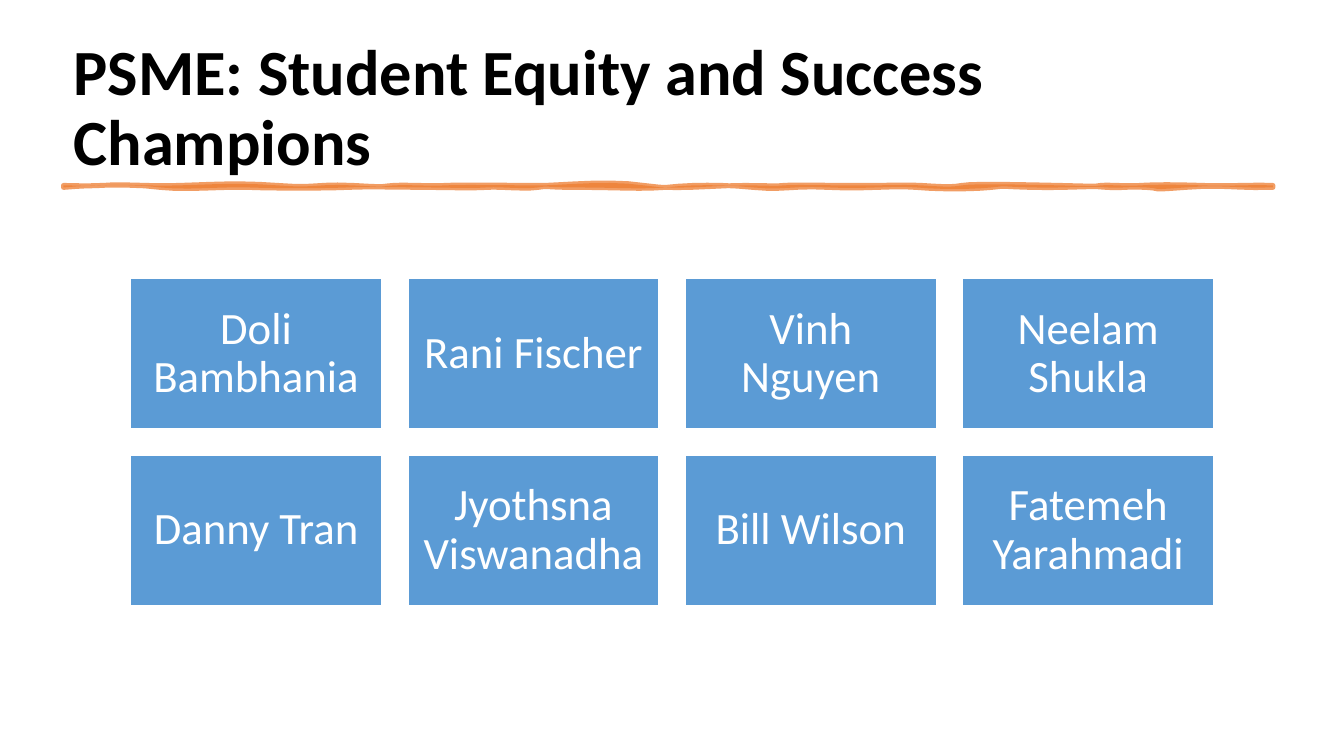
import dataclasses

import lxml.etree
import pptx
import pptx.dml.color
import pptx.enum.shapes
import pptx.enum.text
import pptx.oxml.ns
import pptx.slide
import pptx.text.text
import pptx.util

Cm = pptx.util.Cm
Pt = pptx.util.Pt
RGB = pptx.dml.color.RGBColor

BLACK = RGB(0x00, 0x00, 0x00)
WHITE = RGB(0xFF, 0xFF, 0xFF)
BLUE = RGB(0x5B, 0x9B, 0xD5)
ORANGE = RGB(0xED, 0x7D, 0x31)

FONT = "Calibri"
TITLE = "PSME: Student Equity and Success Champions"
NAMES = (
    "Doli Bambhania", "Rani Fischer", "Vinh Nguyen", "Neelam Shukla",
    "Danny Tran", "Jyothsna Viswanadha", "Bill Wilson", "Fatemeh Yarahmadi",
)

# Tile grid, in centimetres
COLS = 4
LEFT, TOP = 3.28, 7.01
WIDE, HIGH = 6.35, 3.81
GAP = 0.64

# Hand-drawn rule: each curve is x1, y1, x2, y2, end x in units of
# 0.0254 cm; every curve of an edge starts and ends at that edge's height
UNIT = 0.0254
STEPS = 6
START, UPPER, LOWER = 63, 184, 186
OVER = (
    (81, 184, 83, 185, 102), (120, 182, 143, 185, 177),
    (210, 183, 237, 181, 276), (314, 187, 313, 182, 351),
    (388, 186, 375, 185, 390), (404, 183, 430, 185, 441),
    (451, 183, 515, 184, 540), (564, 183, 609, 179, 639),
    (669, 189, 706, 184, 738), (769, 184, 766, 185, 777),
    (787, 183, 819, 184, 852), (884, 184, 897, 183, 915),
    (933, 185, 943, 186, 954), (964, 182, 1008, 183, 1053),
    (1097, 185, 1082, 185, 1092), (1101, 183, 1117, 185, 1131),
    (1144, 183, 1168, 183, 1194), (1219, 185, 1241, 183, 1263),
)
UNDER = (
    (1221, 187, 1216, 183, 1176), (1136, 189, 1156, 187, 1137),
    (1117, 185, 1113, 187, 1098), (1082, 184, 1059, 187, 1023),
    (986, 185, 1003, 184, 984), (965, 188, 930, 188, 909),
    (887, 184, 856, 188, 822), (787, 184, 777, 189, 747),
    (717, 183, 686, 183, 660), (634, 188, 611, 186, 573),
    (535, 186, 547, 184, 534), (521, 188, 494, 185, 483),
    (472, 187, 435, 186, 420), (405, 186, 366, 185, 345),
    (323, 187, 271, 187, 246), (220, 185, 186, 189, 159),
    (131, 182, 85, 184, 63),
)


@dataclasses.dataclass(frozen=True)
class Tile:
    name: str
    left: float
    top: float


def write(frame: pptx.text.text.TextFrame, text: str, size: int,
          tone: RGB, bold: bool = False) -> pptx.text.text._Paragraph:
    """Add one formatted run to the first paragraph."""
    frame.word_wrap = True
    frame.auto_size = pptx.enum.text.MSO_AUTO_SIZE.NONE
    para = frame.paragraphs[0]
    para.line_spacing = 0.9
    run = para.add_run()
    run.text = text
    run.font.name = FONT
    run.font.size = Pt(size)
    run.font.bold = bold
    run.font.color.rgb = tone
    return para


def trace(start: int, level: int, curves: tuple) -> list[tuple[int, int]]:
    """Sample one edge of the rule."""
    spots = [(Cm(start * UNIT), Cm(level * UNIT))]
    for x1, y1, x2, y2, end in curves:
        for step in range(1, STEPS + 1):
            t = step / STEPS
            u = 1 - t
            x = u**3 * start + 3 * u * u * t * x1 + 3 * u * t * t * x2 + t**3 * end
            y = (u**3 + t**3) * level + 3 * u * u * t * y1 + 3 * u * t * t * y2
            spots.append((Cm(x * UNIT), Cm(y * UNIT)))
        start = end
    return spots


def draw_rule(slide: pptx.slide.Slide) -> None:
    spots = trace(START, UPPER, OVER) + trace(OVER[-1][-1], LOWER, UNDER)
    form = slide.shapes.build_freeform(*spots[0], scale=1.0)
    form.add_line_segments(spots[1:], close=True)
    rule = form.convert_to_shape()
    rule.shadow.inherit = False
    rule.fill.solid()
    rule.fill.fore_color.rgb = ORANGE
    rule.line.color.rgb = ORANGE
    rule.line.width = Pt(3.5)
    # Fill and line are a quarter transparent
    qn = pptx.oxml.ns.qn
    for tone in rule._element.spPr.iter(qn("a:srgbClr")):
        lxml.etree.SubElement(tone, qn("a:alpha"), val="75000")


def draw_tile(slide: pptx.slide.Slide, tile: Tile) -> None:
    box = slide.shapes.add_shape(
        pptx.enum.shapes.MSO_SHAPE.RECTANGLE,
        Cm(tile.left), Cm(tile.top), Cm(WIDE), Cm(HIGH))
    box.shadow.inherit = False
    box.fill.solid()
    box.fill.fore_color.rgb = BLUE
    box.line.color.rgb = WHITE
    box.line.width = Pt(1.5)
    frame = box.text_frame
    frame.margin_left = frame.margin_right = Cm(0.33)
    frame.margin_top = frame.margin_bottom = Cm(0.33)
    frame.vertical_anchor = pptx.enum.text.MSO_ANCHOR.MIDDLE
    para = write(frame, tile.name, 32, WHITE)
    para.alignment = pptx.enum.text.PP_ALIGN.CENTER


def main() -> None:
    deck = pptx.Presentation()
    deck.slide_width, deck.slide_height = Cm(33.87), Cm(19.05)
    slide = deck.slides.add_slide(deck.slide_layouts[5])

    # Title
    head = slide.shapes.title
    head.left, head.top = Cm(1.6), Cm(0.66)
    head.width, head.height = Cm(30.61), Cm(3.99)
    head.text_frame.vertical_anchor = pptx.enum.text.MSO_ANCHOR.BOTTOM
    para = write(head.text_frame, TITLE, 46, BLACK, bold=True)
    para.alignment = pptx.enum.text.PP_ALIGN.LEFT

    # Rule under the title
    draw_rule(slide)

    # Champions
    for spot, name in enumerate(NAMES):
        row, col = divmod(spot, COLS)
        draw_tile(slide, Tile(name, LEFT + col * (WIDE + GAP),
                              TOP + row * (HIGH + GAP)))

    deck.save("out.pptx")


if __name__ == "__main__":
    main()
